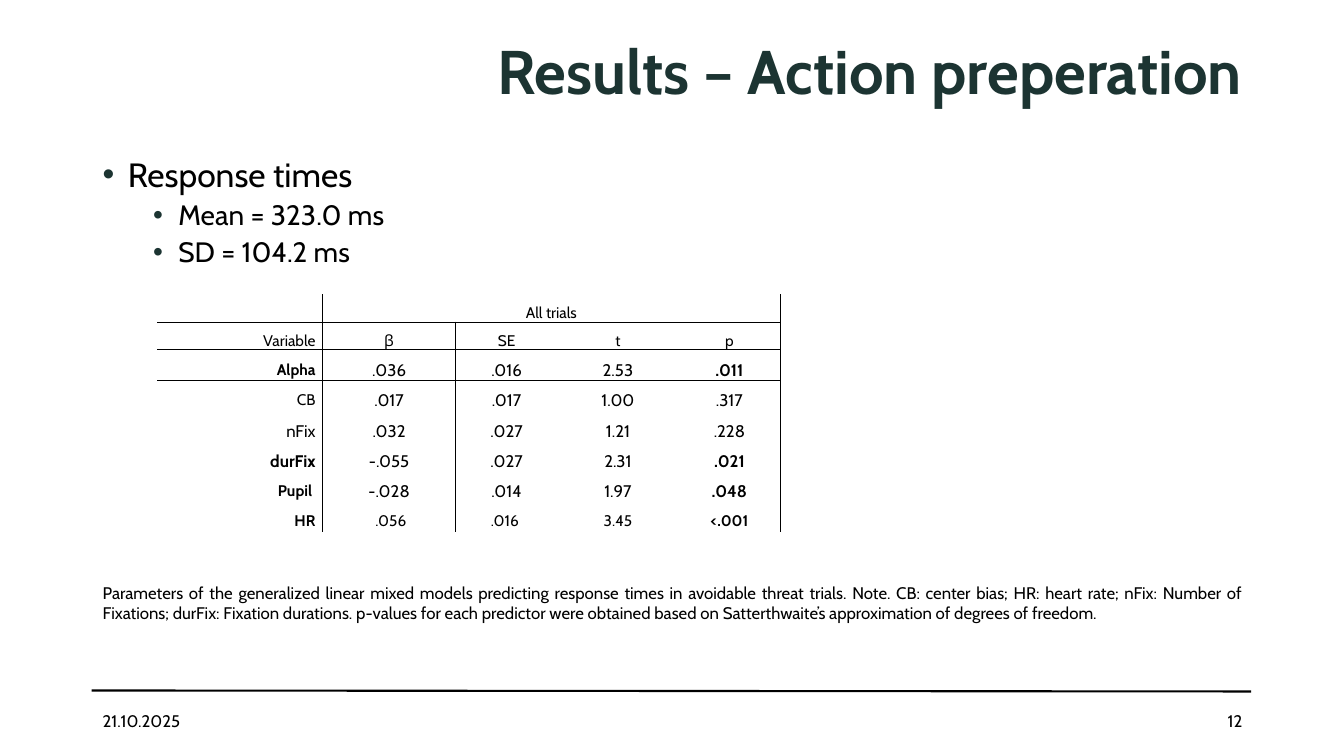
import pptx
import pptx.dml.color
import pptx.enum.shapes
import pptx.enum.text
import pptx.oxml
import pptx.oxml.ns
import pptx.util
from lxml import etree
from pptx.util import Inches

BLACK = pptx.dml.color.RGBColor(0, 0, 0)
GREEN = pptx.dml.color.RGBColor(0x1C, 0x34, 0x32)
FONT = "Cabin"
ALIGN = pptx.enum.text.PP_ALIGN
ANCHOR = pptx.enum.text.MSO_ANCHOR
qn = pptx.oxml.ns.qn
NO_STYLE = "{2D5ABB26-0587-4C30-8999-92F81FD0307C}"

COLUMN_WIDTHS = [1.64, 1.32, 1.01, 1.2, 1.01]
ROWS = [
    ["", "All trials", "", "", ""],
    ["Variable", "β", "SE", "t", "p"],
    ["Alpha", ".036", ".016", "2.53", ".011"],
    ["CB", ".017", ".017", "1.00", ".317"],
    ["nFix", ".032", ".027", "1.21", ".228"],
    ["durFix", "-.055", ".027", "2.31", ".021"],
    ["Pupil ", "-.028", ".014", "1.97", ".048"],
    ["HR", " .056", ".016 ", "3.45", "<.001"],
]
SIGNIFICANT = {"Alpha", "durFix", "Pupil ", "HR"}
RULED_ROWS = {1, 2, 3}
NOTE = [
    ("Parameters of the generalized linear mixed models predicting response "
     "times in avoidable threat trials.", 12),
    (" ", 8),
    ("Note. CB: center bias; HR: heart rate; nFix: Number of Fixations; durFix: "
     "Fixation durations. p-values for each predictor were obtained based on "
     "Satterthwaite’s approximation of degrees of freedom.", 12),
]


def style_run(r, size, color=BLACK, bold=False):
    r.font.name = FONT
    r.font.size = pptx.util.Pt(size)
    r.font.color.rgb = color
    r.font.bold = bold


def add_text_frame(s, left, top, width, height, anchor=ANCHOR.MIDDLE):
    box = s.shapes.add_textbox(Inches(left), Inches(top), Inches(width), Inches(height))
    tf = box.text_frame
    tf.word_wrap = True
    tf.vertical_anchor = anchor
    return tf


def add_text(s, box, runs, align, color=BLACK, bold=False):
    """Add one paragraph made of (text, size) runs."""
    p = add_text_frame(s, *box).paragraphs[0]
    p.alignment = align
    for text, size in runs:
        r = p.add_run()
        r.text = text
        style_run(r, size, color, bold)
    return p


def add_bullets(s, box, items):
    tf = add_text_frame(s, *box, anchor=ANCHOR.TOP)
    for i, (text, level, size) in enumerate(items):
        p = tf.add_paragraph() if i else tf.paragraphs[0]
        p.text = text
        p.level = level
        p.line_spacing = 0.9
        p.space_before = pptx.util.Pt(5 if i else 0)
        pPr = p._p.get_or_add_pPr()
        pPr.set("marL", str(Inches(0.25 + 0.5 * level)))
        pPr.set("indent", str(Inches(-0.25)))
        color = etree.SubElement(pPr, qn("a:buClr"))
        etree.SubElement(color, qn("a:srgbClr"), val=str(GREEN))
        etree.SubElement(pPr, qn("a:buFont"), typeface="Arial")
        etree.SubElement(pPr, qn("a:buChar"), char="•")
        style_run(p.runs[0], size)


def set_borders(cell, row, col):
    """Draw the cell edges that lie on one of the table's rules."""
    ruled_columns = {1, 5} if row == 0 else {1, 2, 5}
    edges = {
        "L": col in ruled_columns,
        "R": col + cell.span_width in ruled_columns,
        "T": row in RULED_ROWS,
        "B": row + 1 in RULED_ROWS,
    }
    tcPr = cell._tc.get_or_add_tcPr()
    for side, ruled in edges.items():
        ln = etree.SubElement(tcPr, qn(f"a:ln{side}"), w=str(pptx.util.Pt(1)))
        if ruled:
            fill = etree.SubElement(ln, qn("a:solidFill"))
            etree.SubElement(fill, qn("a:srgbClr"), val=str(BLACK))
        else:
            etree.SubElement(ln, qn("a:noFill"))


def text_size(row, col):
    small_labels = {"Alpha", "CB", "Pupil "}
    label = ROWS[row][0]
    small = row < 2 or label == "HR" or (col == 0 and label in small_labels)
    return 11 if small else 12


def fill_cell(cell, row, col):
    cell.margin_left = cell.margin_right = Inches(0.07)
    cell.margin_top = cell.margin_bottom = 0
    cell.vertical_anchor = ANCHOR.MIDDLE
    size = text_size(row, col)
    p = cell.text_frame.paragraphs[0]
    p.alignment = ALIGN.CENTER if col else ALIGN.RIGHT
    p.line_spacing = 1.5
    if ROWS[row][col]:
        p.text = ROWS[row][col]
        bold = ROWS[row][0] in SIGNIFICANT and col in (0, 4)
        style_run(p.runs[0], size, bold=bold)
    else:
        etree.SubElement(p._p, qn("a:endParaRPr"), sz=str(size * 100))
    set_borders(cell, row, col)
    cell.fill.background()


def add_results_table(s):
    frame = s.shapes.add_table(len(ROWS), len(COLUMN_WIDTHS), Inches(1.56), Inches(2.92),
                               Inches(sum(COLUMN_WIDTHS)), Inches(2.32))
    table = frame.table
    table.first_row = table.horz_banding = False
    table._tbl.tblPr.find(qn("a:tableStyleId")).text = NO_STYLE
    for column, width in zip(table.columns, COLUMN_WIDTHS):
        column.width = Inches(width)
    for i, row in enumerate(table.rows):
        row.height = Inches(0.27 if i < 2 else 0.3)
    table.cell(0, 1).merge(table.cell(0, 4))
    for row in range(len(ROWS)):
        for col in range(len(COLUMN_WIDTHS)):
            fill_cell(table.cell(row, col), row, col)


def add_footer_line(s):
    line = s.shapes.add_connector(pptx.enum.shapes.MSO_CONNECTOR.STRAIGHT,
                                  Inches(0.91), Inches(6.85), Inches(12.41), Inches(6.86))
    line.line.color.rgb = BLACK
    line.line.width = pptx.util.Pt(1.5)
    etree.SubElement(line._element.spPr, qn("a:effectLst"))


def main():
    prs = pptx.Presentation()
    prs.slide_width, prs.slide_height = Inches(13.33), Inches(7.5)
    s = prs.slides.add_slide(prs.slide_layouts[6])
    add_footer_line(s)
    add_text(s, (0.92, 6.95, 3, 0.4), [("21.10.2025", 12)], ALIGN.LEFT)
    add_text(s, (9.42, 6.95, 3, 0.4), [("12", 12)], ALIGN.RIGHT)
    title = add_text(s, (0.92, 0.01, 11.5, 1.45), [("Results – Action preperation", 44)],
                     ALIGN.RIGHT, GREEN, bold=True)
    title.line_spacing = 0.9
    add_results_table(s)
    add_text(s, (0.92, 5.73, 11.5, 0.5), NOTE, ALIGN.JUSTIFY)
    add_bullets(s, (0.92, 1.52, 11.5, 5.24), [
        ("Response times", 0, 24),
        ("Mean = 323.0 ms", 1, 20),
        ("SD = 104.2 ms", 1, 20),
    ])
    prs.save("out.pptx")


if __name__ == "__main__":
    main()
